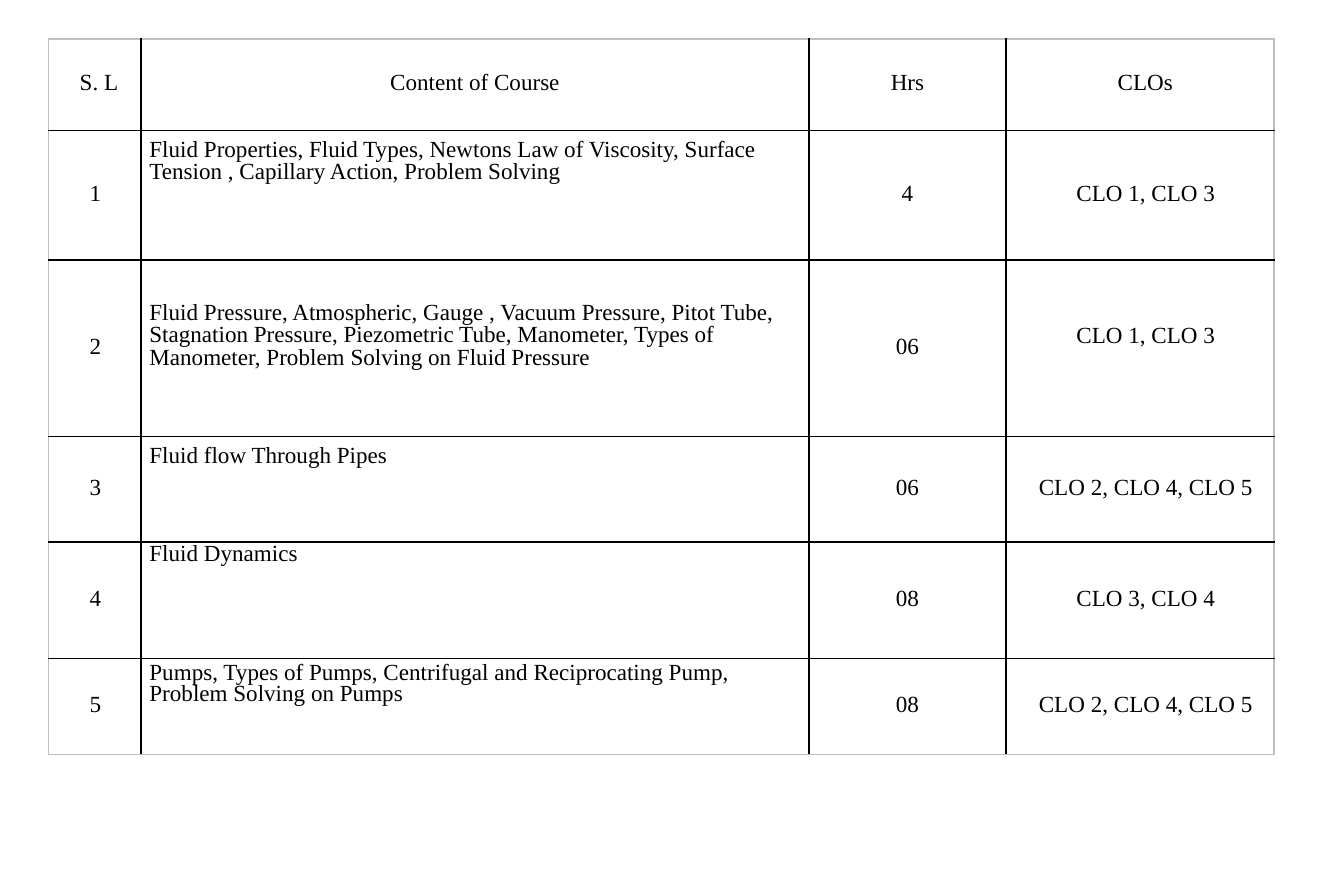
from dataclasses import dataclass

import pptx
import pptx.dml.color
import pptx.enum.text
import pptx.oxml
import pptx.oxml.ns
import pptx.table
import pptx.util

Inches = pptx.util.Inches
Pt = pptx.util.Pt
PP_ALIGN = pptx.enum.text.PP_ALIGN
MSO_ANCHOR = pptx.enum.text.MSO_ANCHOR

BLACK = pptx.dml.color.RGBColor(0x00, 0x00, 0x00)
GRAY = pptx.dml.color.RGBColor(0xBF, 0xBF, 0xBF)
FONT = "Times New Roman"
COL_WIDTHS = [0.78, 5.63, 1.66, 2.26]
HEADER_LEFTS = [0.07, 0, 0, 0.09]
BODY_LEFTS = [0.01, 0.07, 0, 0.1]
CONTENT_COL = 1
CLO_COL = 3


@dataclass
class CourseRow:
    height: float
    texts: list[str]
    line_pt: float = 13.4
    content_top: float = 0
    clo_bottom: float = 0


ROWS = [
    CourseRow(0.77, ["S. L", "Content of Course", "Hrs", "CLOs"], 12.9),
    CourseRow(1.09, ["1", "Fluid Properties, Fluid Types, Newtons Law of Viscosity, "
                     "Surface Tension , Capillary Action, Problem Solving",
                     "4", "CLO 1, CLO 3"], content_top=0.08),
    CourseRow(1.49, ["2", "Fluid Pressure, Atmospheric, Gauge , Vacuum Pressure, Pitot Tube, "
                     "Stagnation Pressure, Piezometric Tube, Manometer, Types of Manometer, "
                     "Problem Solving on Fluid Pressure",
                     "06", "CLO 1, CLO 3"], content_top=0.37, clo_bottom=0.19),
    CourseRow(0.89, ["3", "Fluid flow Through Pipes", "06", "CLO 2, CLO 4, CLO 5"],
              content_top=0.08),
    CourseRow(0.98, ["4", "Fluid Dynamics", "08", "CLO 3, CLO 4"], content_top=0.02),
    CourseRow(0.81, ["5", "Pumps, Types of Pumps, Centrifugal and Reciprocating Pump, "
                     "Problem Solving on Pumps",
                     "08", "CLO 2, CLO 4, CLO 5"], 12.8, content_top=0.05),
]


def set_borders(cell: pptx.table._Cell, row: int, col: int) -> None:
    """Black rules inside the table, gray ones around it."""
    outer = {"lnL": col == 0, "lnR": col == len(COL_WIDTHS) - 1,
             "lnT": row == 0, "lnB": row == len(ROWS) - 1}
    tc_pr = cell._tc.get_or_add_tcPr()
    for tag, is_outer in outer.items():
        color = GRAY if is_outer else BLACK
        tc_pr.append(pptx.oxml.parse_xml(
            f'<a:{tag} {pptx.oxml.ns.nsdecls("a")} w="{Pt(1)}">'
            f'<a:solidFill><a:srgbClr val="{color}"/></a:solidFill></a:{tag}>'))


def fill_cell(cell: pptx.table._Cell, row: int, col: int) -> None:
    data = ROWS[row]
    is_content = row > 0 and col == CONTENT_COL
    set_borders(cell, row, col)
    cell.fill.background()
    cell.margin_left = Inches((BODY_LEFTS if row else HEADER_LEFTS)[col])
    cell.margin_right = 0
    cell.margin_top = Inches(data.content_top if is_content else 0)
    cell.margin_bottom = Inches(data.clo_bottom if col == CLO_COL else 0)
    cell.vertical_anchor = MSO_ANCHOR.TOP if is_content else MSO_ANCHOR.MIDDLE
    p = cell.text_frame.paragraphs[0]
    p.alignment = PP_ALIGN.LEFT if is_content else PP_ALIGN.CENTER
    p.line_spacing = Pt(data.line_pt)
    r = p.add_run()
    r.text = data.texts[col]
    r.font.name = FONT
    r.font.size = Pt(14)
    r.font.color.rgb = BLACK


def main() -> None:
    prs = pptx.Presentation()
    prs.slide_width, prs.slide_height = Inches(11.33), Inches(7.5)
    s = prs.slides.add_slide(prs.slide_layouts[6])
    table = s.shapes.add_table(
        len(ROWS), len(COL_WIDTHS), Inches(0.41), Inches(0.33),
        Inches(sum(COL_WIDTHS)), Inches(sum(row.height for row in ROWS))).table
    table.first_row = False
    table.horz_banding = False
    for col, width in enumerate(COL_WIDTHS):
        table.columns[col].width = Inches(width)
    for row, data in enumerate(ROWS):
        table.rows[row].height = Inches(data.height)
        for col in range(len(COL_WIDTHS)):
            fill_cell(table.cell(row, col), row, col)
    prs.save("out.pptx")


if __name__ == "__main__":
    main()
